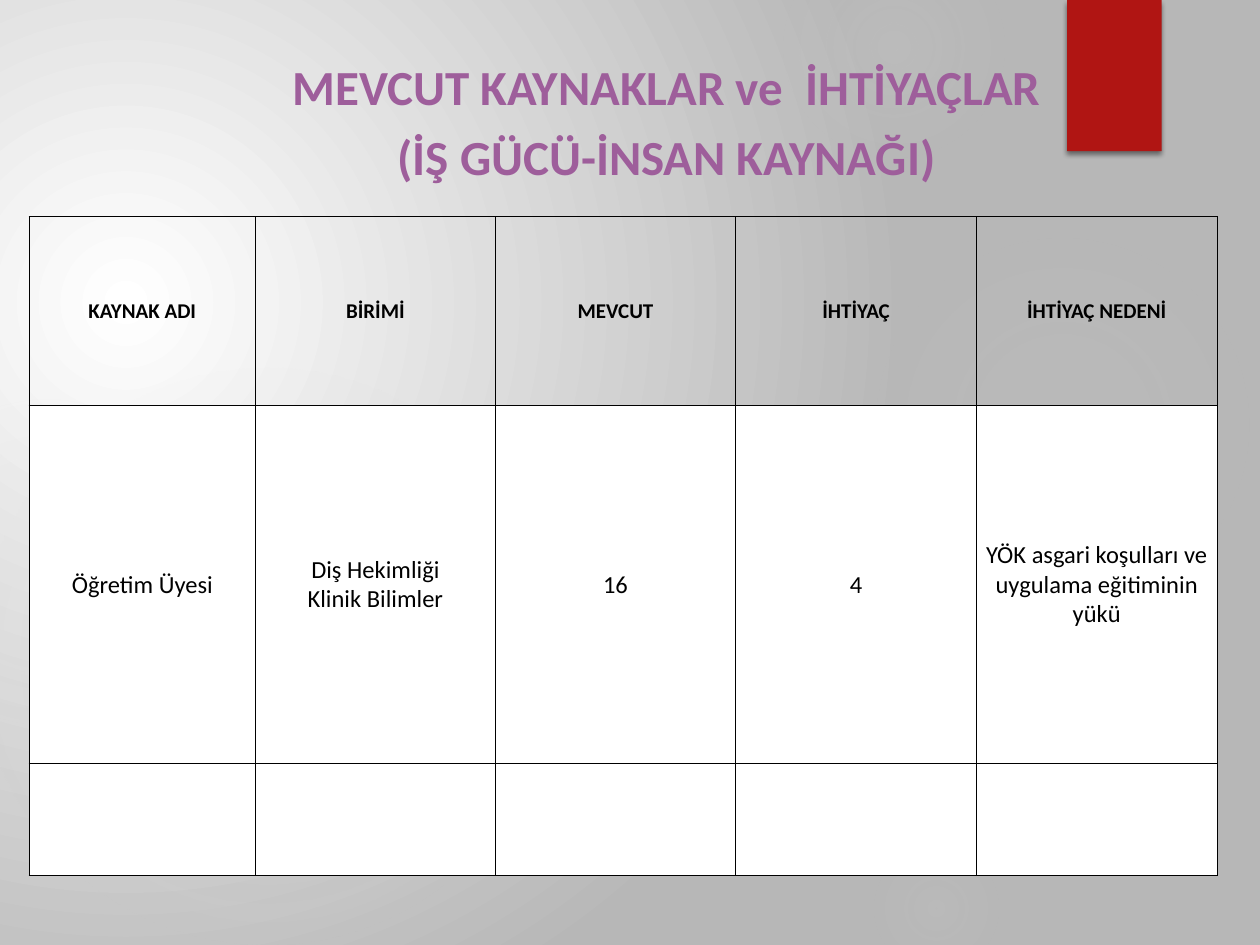
from lxml.etree import SubElement
from pptx import Presentation
from pptx.dml.color import RGBColor
from pptx.enum.shapes import MSO_SHAPE
from pptx.enum.text import MSO_ANCHOR, MSO_AUTO_SIZE, PP_ALIGN
from pptx.oxml.ns import qn
from pptx.util import Inches, Pt

WHITE = RGBColor(0xFF, 0xFF, 0xFF)
BLACK = RGBColor(0x00, 0x00, 0x00)
GRAY = RGBColor(0xB7, 0xB7, 0xB7)
GLOW = RGBColor(0xD9, 0xD9, 0xD9)
RED = RGBColor(0xB0, 0x15, 0x13)
PURPLE = RGBColor(0x9E, 0x5E, 0x9B)
FONT = "Calibri"


def add_color(parent, color, alpha=100):
    """Add a solid colour element; alpha is opacity in percent."""
    element = SubElement(parent, qn("a:srgbClr"), val=str(color))
    if alpha < 100:
        SubElement(element, qn("a:alpha"), val=str(alpha * 1000))


def set_radial_gradient(fill, owner, stops, focus):
    """Fill with (position, colour, alpha) stops around a focus given as l, t, r, b percent."""
    fill.gradient()
    gradient = next(owner.iter(qn("a:gradFill")))
    for child in list(gradient):
        gradient.remove(child)
    stop_list = SubElement(gradient, qn("a:gsLst"))
    for position, color, alpha in stops:
        stop = SubElement(stop_list, qn("a:gs"), pos=str(position * 1000))
        add_color(stop, color, alpha)
    circle = SubElement(gradient, qn("a:path"), path="circle")
    sides = {side: str(value * 1000) for side, value in zip("ltrb", focus)}
    SubElement(circle, qn("a:fillToRect"), **sides)


presentation = Presentation()
presentation.slide_width = Inches(10)
presentation.slide_height = Inches(7.5)
slide = presentation.slides.add_slide(presentation.slide_layouts[5])

# Background with soft glows
set_radial_gradient(slide.background.fill, slide.element,
                    [(0, WHITE, 100), (100, GRAY, 100)], (45, 65, 125, 100))
glows = [  # left, top, diameter, inner alpha, middle alpha, outer stop
    (6.89, 1.83, 3.08, 7, 6, 69),
    (6.22, -0.5, 1.75, 14, 7, 73),
    (6.89, 6.67, 1.08, 9, 5, 66),
    (-0.17, 2.92, 4.58, 11, 10, 75),
    (-0.92, 3.17, 2.58, 8, 8, 72),
]
for left, top, diameter, inner, middle, outer in glows:
    glow = slide.shapes.add_shape(MSO_SHAPE.OVAL, Inches(left), Inches(top),
                                  Inches(diameter), Inches(diameter))
    glow.shadow.inherit = False
    glow.line.fill.background()
    set_radial_gradient(glow.fill, glow.element,
                        [(0, GLOW, inner), (36, GLOW, middle), (outer, GLOW, 0)],
                        (50, 50, 50, 50))

# Red tab
tab = slide.shapes.add_shape(MSO_SHAPE.RECTANGLE, Inches(8.47), Inches(0),
                             Inches(0.75), Inches(1.2))
tab.fill.solid()
tab.fill.fore_color.rgb = RED
tab.line.fill.background()
tab.shadow.inherit = False
effects = next(tab.element.iter(qn("a:effectLst")))
shadow = SubElement(effects, qn("a:outerShdw"), blurRad=str(Pt(3)), dist=str(Pt(2)),
                    dir="5400000", rotWithShape="0")
add_color(shadow, BLACK, 45)

# Title, brought in front of the background shapes
title = slide.shapes.title
title.element.getparent().append(title.element)
title.left, title.top = Inches(2.08), Inches(0.06)
title.width, title.height = Inches(6.42), Inches(1.46)
frame = title.text_frame
frame.text = "MEVCUT KAYNAKLAR ve  İHTİYAÇLAR\n(İŞ GÜCÜ-İNSAN KAYNAĞI)"
frame.auto_size = MSO_AUTO_SIZE.NONE
frame.word_wrap = True
frame.vertical_anchor = MSO_ANCHOR.BOTTOM
for paragraph in frame.paragraphs:
    paragraph.alignment = PP_ALIGN.CENTER
    paragraph.space_before = Pt(0)
    paragraph.space_after = Pt(6)
    paragraph.font.name = FONT
    paragraph.font.size = Pt(28)
    paragraph.font.bold = True
    paragraph.font.color.rgb = PURPLE

# Resource table
rows = [
    ["KAYNAK ADI", "BİRİMİ", "MEVCUT", "İHTİYAÇ", "İHTİYAÇ NEDENİ"],
    ["Öğretim Üyesi", "Diş Hekimliği\nKlinik Bilimler", "16", "4",
     "YÖK asgari koşulları ve uygulama eğitiminin yükü"],
    [""] * 5,
]
column_widths = [1.8, 1.9, 1.91, 1.91, 1.91]
row_heights = [1.5, 2.84, 0.89]
table = slide.shapes.add_table(len(rows), len(column_widths), Inches(0.23), Inches(1.72),
                               Inches(sum(column_widths)), Inches(sum(row_heights))).table
table.first_row = False
table.horz_banding = False
for column, width in zip(table.columns, column_widths):
    column.width = Inches(width)
for row, height in zip(table.rows, row_heights):
    row.height = Inches(height)

for row_index, texts in enumerate(rows):
    is_header = row_index == 0
    for column_index, text in enumerate(texts):
        cell = table.cell(row_index, column_index)
        cell.margin_left = cell.margin_right = cell.margin_top = cell.margin_bottom = 0
        cell.vertical_anchor = MSO_ANCHOR.MIDDLE
        properties = cell.fill and next(cell.text_frame.paragraphs[0]._p.iterancestors(qn("a:tc"))).tcPr
        for side in ("lnL", "lnR", "lnT", "lnB"):
            border = SubElement(properties, qn(f"a:{side}"), w=str(Pt(0.5)))
            add_color(SubElement(border, qn("a:solidFill")), BLACK)
        if is_header:
            cell.fill.background()
        else:
            cell.fill.solid()
            cell.fill.fore_color.rgb = WHITE
        cell.text = text
        for paragraph in cell.text_frame.paragraphs:
            paragraph.alignment = PP_ALIGN.CENTER
            paragraph.font.name = FONT
            paragraph.font.size = Pt(12 if is_header else 14)
            paragraph.font.bold = is_header
            paragraph.font.color.rgb = BLACK

presentation.save("out.pptx")
